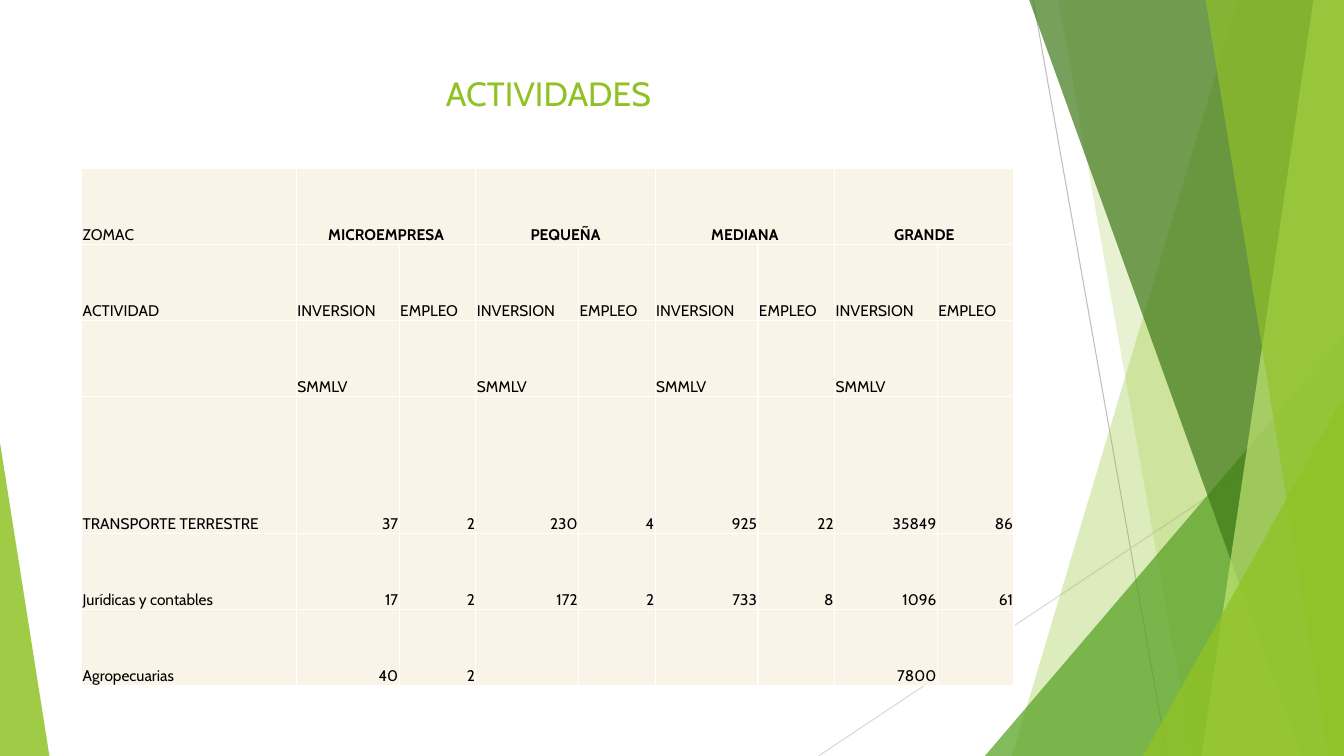
from lxml.etree import SubElement
from pptx import Presentation
from pptx.dml.color import RGBColor
from pptx.enum.shapes import MSO_CONNECTOR, MSO_SHAPE
from pptx.enum.text import MSO_ANCHOR, PP_ALIGN
from pptx.oxml.ns import qn
from pptx.util import Inches, Pt

WIDTH, HEIGHT = Inches(13.333), Inches(7.5)
FONT = "Cabin"
LIME = RGBColor(0x90, 0xC2, 0x26)
LEAF = RGBColor(0x54, 0xA0, 0x21)
FOREST = RGBColor(0x3F, 0x78, 0x19)
PALE_LIME = RGBColor(0xC0, 0xE4, 0x74)
GREY = RGBColor(0xBF, 0xBF, 0xBF)
LIGHT_GREY = RGBColor(0xD9, 0xD9, 0xD9)
CREAM = RGBColor(0xFA, 0xF3, 0xE8)
WHITE = RGBColor(0xFF, 0xFF, 0xFF)
BLACK = RGBColor(0x00, 0x00, 0x00)

SIZES = ["MICROEMPRESA", "PEQUEÑA", "MEDIANA", "GRANDE"]
HEADINGS = [
    ["ZOMAC"] + [text for size in SIZES for text in (size, "")],
    ["ACTIVIDAD"] + ["INVERSION", "EMPLEO"] * len(SIZES),
    [""] + ["SMMLV", ""] * len(SIZES),
]
ACTIVITIES = [
    ["TRANSPORTE TERRESTRE", "37", "2", "230", "4", "925", "22", "35849", "86"],
    ["Jurídicas y contables", "17", "2", "172", "2", "733", "8", "1096", "61"],
    ["Agropecuarias", "40", "2", "", "", "", "", "7800", ""],
]
COLUMN_SHARES = [15.98] + [7.65, 5.7] * len(SIZES)
ROW_SHARES = [10.05, 10.05, 10.05, 18.1, 10.05, 10.05]


def across(percent):
    return round(WIDTH * percent / 100)


def down(percent):
    return round(HEIGHT * percent / 100)


def paint(shape, color, opacity):
    """Fill a shape with a see-through colour; opacity is in percent."""
    shape.shadow.inherit = False
    shape.line.fill.background()
    shape.fill.solid()
    shape.fill.fore_color.rgb = color
    color_node = shape.fill._xPr.find(qn("a:solidFill"))[0]
    SubElement(color_node, qn("a:alpha"), val=str(opacity * 1000))


def add_thin_line(page, start, end, color):
    line = page.shapes.add_connector(
        MSO_CONNECTOR.STRAIGHT,
        across(start[0]), down(start[1]), across(end[0]), down(end[1]))
    line.line.color.rgb = color
    line.line.width = Pt(0.75)
    SubElement(line._element.spPr, qn("a:effectLst"))


def add_facet(page, top_left, bottom_left, color, opacity):
    """Full-height panel with a slanted left side, ending at the right edge."""
    builder = page.shapes.build_freeform(across(top_left), 0)
    builder.add_line_segments([(WIDTH, 0), (WIDTH, HEIGHT), (across(bottom_left), HEIGHT)])
    paint(builder.convert_to_shape(), color, opacity)


def add_corner(page, left, top, width, apex, color, opacity):
    """Triangle standing on the bottom edge, its apex at a share of its width."""
    corner = page.shapes.add_shape(
        MSO_SHAPE.ISOSCELES_TRIANGLE,
        across(left), down(top), across(width), down(100 - top))
    corner.adjustments[0] = apex
    paint(corner, color, opacity)


def add_backdrop(page):
    add_thin_line(page, (76.88, 0), (86.85, 100), GREY)
    add_thin_line(page, (100, 53.73), (60.9, 100), LIGHT_GREY)
    add_facet(page, 92.1, 75.3, LIME, 30)
    add_facet(page, 78.75, 88.73, LIME, 20)
    add_corner(page, 73.28, 44.4, 26.72, 1, LEAF, 72)
    add_facet(page, 76.58, 96.83, FOREST, 70)
    add_facet(page, 97.73, 89.4, PALE_LIME, 70)
    add_facet(page, 89.7, 98.85, LIME, 65)
    add_corner(page, 85.05, 52.4, 14.95, 1, LIME, 80)
    add_corner(page, 0, 58.53, 3.68, 0, LIME, 85)


def write(frame, text, size, color, align, bold=False):
    para = frame.paragraphs[0]
    para.text = text
    para.alignment = align
    font = para.font
    font.name, font.size, font.bold = FONT, Pt(size), bold
    font.color.rgb = color


def add_title(page, text):
    box = page.shapes.add_textbox(across(5.55), down(8.93), across(70.5), down(4.53))
    box.text_frame.word_wrap = True
    write(box.text_frame, text, 24, LIME, PP_ALIGN.CENTER)


def style_cell(cell):
    properties = cell._tc.get_or_add_tcPr()
    for side in ("a:lnL", "a:lnR", "a:lnT", "a:lnB"):
        border = SubElement(properties, qn(side), w=str(Pt(1)))
        fill = SubElement(border, qn("a:solidFill"))
        SubElement(fill, qn("a:srgbClr"), val=str(WHITE))
    cell.fill.solid()
    cell.fill.fore_color.rgb = CREAM
    cell.vertical_anchor = MSO_ANCHOR.BOTTOM
    cell.margin_left = cell.margin_right = cell.margin_top = Inches(0.01)
    cell.margin_bottom = 0


def add_activity_table(page):
    rows = HEADINGS + ACTIVITIES
    table = page.shapes.add_table(
        len(rows), len(COLUMN_SHARES), across(6.08), down(22.3),
        across(sum(COLUMN_SHARES)), down(sum(ROW_SHARES))).table
    table.first_row = table.horz_banding = False
    for column, share in zip(table.columns, COLUMN_SHARES):
        column.width = across(share)
    for row, share in zip(table.rows, ROW_SHARES):
        row.height = down(share)
    for r, texts in enumerate(rows):
        for c, text in enumerate(texts):
            cell = table.cell(r, c)
            style_cell(cell)
            is_size = text in SIZES
            if is_size:
                align = PP_ALIGN.CENTER
            elif c > 0 and r >= len(HEADINGS):
                align = PP_ALIGN.RIGHT
            else:
                align = PP_ALIGN.LEFT
            write(cell.text_frame, text, 11, BLACK, align, is_size)
            if is_size:
                cell.merge(table.cell(r, c + 1))


def main():
    deck = Presentation()
    deck.slide_width, deck.slide_height = WIDTH, HEIGHT
    page = deck.slides.add_slide(deck.slide_layouts[6])
    add_backdrop(page)
    add_title(page, "ACTIVIDADES")
    add_activity_table(page)
    deck.save("out.pptx")


if __name__ == "__main__":
    main()
